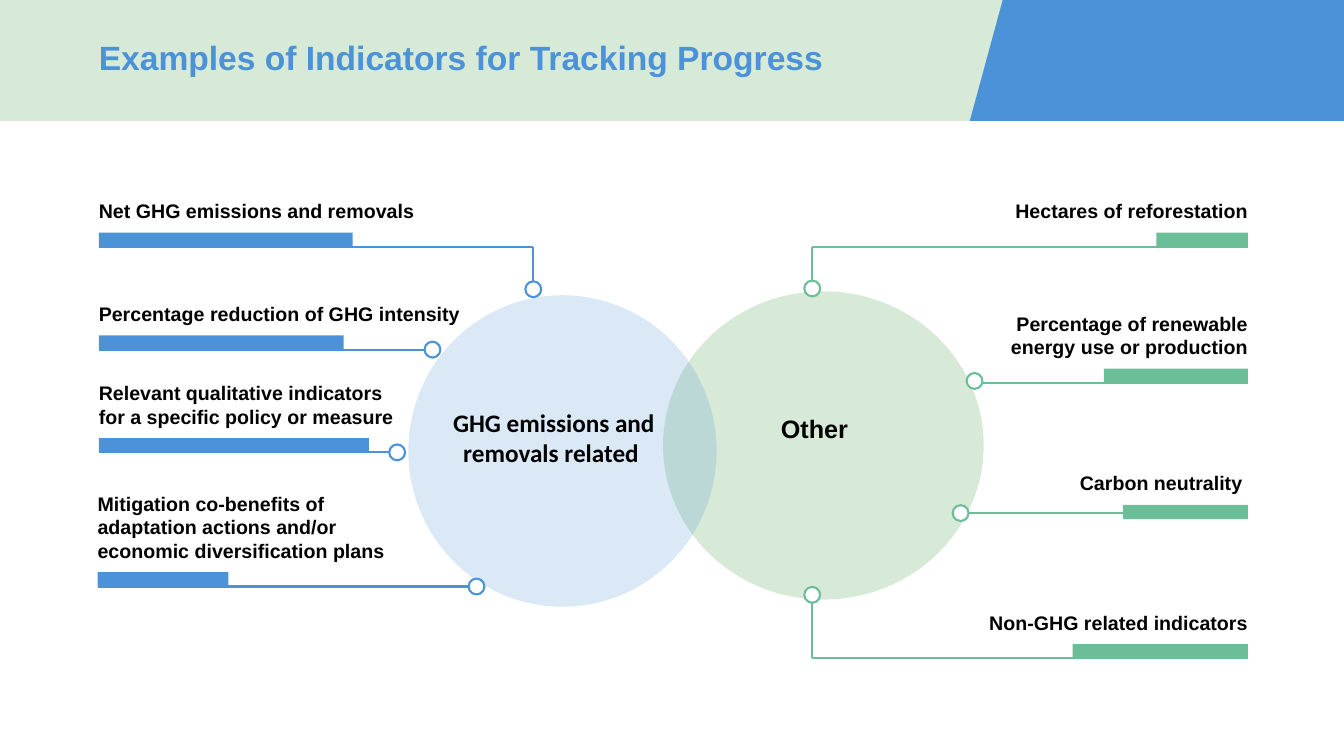
"""Build the slide on indicators for tracking progress."""
import pptx
import pptx.dml.color
import pptx.enum.shapes
import pptx.enum.text
import pptx.oxml.ns
import pptx.oxml.xmlchemy
import pptx.util

Cm = pptx.util.Cm
RGBColor = pptx.dml.color.RGBColor
Shape = pptx.enum.shapes.MSO_SHAPE
Align = pptx.enum.text.PP_ALIGN
Anchor = pptx.enum.text.MSO_ANCHOR

BLUE = RGBColor(0x4B, 0x92, 0xD8)
GREEN = RGBColor(0x6C, 0xBE, 0x99)
PALE_GREEN = RGBColor(0xD7, 0xEA, 0xD7)
BLACK = RGBColor(0, 0, 0)
WHITE = RGBColor(0xFF, 0xFF, 0xFF)

SLIDE_WIDTH, SLIDE_HEIGHT = 33.87, 19.05
HEADER_HEIGHT = 3.05
LINE_WIDTH = pptx.util.Pt(1.5)
RING_SIZE = 0.4
BAR_HEIGHT = 0.36
LABEL_GAP = 0.48
ROW_HEIGHT = 0.6
LEFT_EDGE, RIGHT_EDGE = 2.49, 31.45

LEFT_INDICATORS = [
    dict(text="Relevant qualitative indicators for a specific policy or measure",
         rows=2, base=11.4, width=7.8, bar=6.81, ring=(10.01, 11.4)),
    dict(text="Mitigation co-benefits of adaptation actions and/or economic diversification plans",
         rows=3, base=14.78, width=8.08, bar=3.3, ring=(12.01, 14.78), edge=2.46),
    dict(text="Percentage reduction of GHG intensity",
         base=8.81, width=9.98, bar=6.17, ring=(10.9, 8.81)),
    dict(text="Net GHG emissions and removals",
         base=6.22, width=9.55, bar=6.4, ring=(13.44, 7.29)),
]
RIGHT_INDICATORS = [
    dict(text="Hectares of reforestation",
         base=6.22, width=9.55, bar=2.31, ring=(20.47, 7.27)),
    dict(text="Non-GHG related indicators",
         base=16.59, width=9.55, bar=4.42, ring=(20.47, 14.99)),
    dict(text="Carbon neutrality ",
         base=13.08, width=9.55, bar=3.15, ring=(24.21, 12.93), line_y=12.92),
    dict(text="Percentage of renewable energy use or production",
         rows=2, base=9.65, width=7.11, bar=3.63, ring=(24.56, 9.6)),
]


def add_text(page, text, left, top, width, height, *, size=14, font="Arial",
             color=BLACK, align=Align.LEFT, anchor=Anchor.MIDDLE,
             right_inset=0, bottom_inset=0.13, line_spacing=1.0):
    """Add a bold, wrapped text box."""
    box = page.shapes.add_textbox(Cm(left), Cm(top), Cm(width), Cm(height))
    frame = box.text_frame
    frame.word_wrap = True
    frame.vertical_anchor = anchor
    frame.margin_left = frame.margin_top = 0
    frame.margin_right, frame.margin_bottom = Cm(right_inset), Cm(bottom_inset)
    para = frame.paragraphs[0]
    para.alignment = align
    para.line_spacing = line_spacing
    span = para.add_run()
    span.text = text
    span.font.name = font
    span.font.size = pptx.util.Pt(size)
    span.font.bold = True
    span.font.color.rgb = color


def paint(shape, fill, outline=None):
    """Give a shape a flat fill and an optional outline."""
    shape.shadow.inherit = False
    shape.fill.solid()
    shape.fill.fore_color.rgb = fill
    if outline is None:
        shape.line.fill.background()
    else:
        shape.line.color.rgb = outline
        shape.line.width = LINE_WIDTH


def add_shape(page, kind, left, top, width, height, fill, outline=None):
    """Add a painted preset shape."""
    shape = page.shapes.add_shape(kind, Cm(left), Cm(top), Cm(width), Cm(height))
    paint(shape, fill, outline)
    return shape


def set_opacity(shape, percent):
    """Make the solid fill of a shape see-through."""
    color = shape._element.spPr.find(".//" + pptx.oxml.ns.qn("a:srgbClr"))
    alpha = pptx.oxml.xmlchemy.OxmlElement("a:alpha")
    alpha.set("val", str(percent * 1000))
    color.append(alpha)


def add_line(page, start, end, color):
    """Add a straight line between two points."""
    line = page.shapes.add_connector(
        pptx.enum.shapes.MSO_CONNECTOR.STRAIGHT, *map(Cm, start + end))
    line.line.color.rgb = color
    line.line.width = LINE_WIDTH
    line._element.spPr.append(pptx.oxml.xmlchemy.OxmlElement("a:effectLst"))


def add_header(page):
    """Add the title band with its slanted corner."""
    add_shape(page, Shape.RECTANGLE, 0, 0, SLIDE_WIDTH, HEADER_HEIGHT, PALE_GREEN)
    builder = page.shapes.build_freeform(Cm(24.44), Cm(HEADER_HEIGHT))
    corners = [(25.27, 0), (SLIDE_WIDTH, 0), (SLIDE_WIDTH, HEADER_HEIGHT)]
    builder.add_line_segments([(Cm(x), Cm(y)) for x, y in corners])
    paint(builder.convert_to_shape(), BLUE)
    add_text(page, "Examples of Indicators for Tracking Progress",
             2.49, 0.74, 19.94, 1.55, size=24, color=BLUE,
             bottom_inset=0, line_spacing=0.9)


def add_circles(page):
    """Add the two overlapping circles with their names."""
    add_shape(page, Shape.OVAL, 16.71, 7.34, 8.08, 7.77, PALE_GREEN)
    add_text(page, "Other ", 18.01, 10.41, 5.46, 0.89, size=18,
             align=Align.CENTER, right_inset=0.25)
    blue_circle = add_shape(page, Shape.OVAL, 10.29, 7.44, 7.77, 7.85, BLUE)
    set_opacity(blue_circle, 20)
    add_text(page, "GHG emissions and removals related ", 11.05, 10.24, 6.07, 1.68,
             size=18, font="Calibri", align=Align.CENTER, right_inset=0.25)


def add_indicator(page, *, text, base, width, bar, ring, edge, color,
                  from_right=False, rows=1, line_y=None):
    """Add a label, its bar and the line that leads to a ring."""
    ring_x, ring_y = ring
    line_y = line_y or base
    height = rows * ROW_HEIGHT + 0.13
    add_text(page, text, edge - width * from_right, base - LABEL_GAP - height,
             width, height, anchor=Anchor.BOTTOM,
             align=Align.RIGHT if from_right else Align.LEFT)
    add_shape(page, Shape.RECTANGLE, edge - bar * from_right, base - BAR_HEIGHT,
              bar, BAR_HEIGHT, color)
    add_line(page, (ring_x, line_y), (edge, line_y), color)
    if abs(ring_y - line_y) > RING_SIZE:
        add_line(page, (ring_x, line_y), (ring_x, ring_y), color)
    add_shape(page, Shape.OVAL, ring_x - RING_SIZE / 2, ring_y - RING_SIZE / 2,
              RING_SIZE, RING_SIZE, WHITE, color)


def main():
    """Build and save the deck."""
    deck = pptx.Presentation()
    deck.slide_width, deck.slide_height = Cm(SLIDE_WIDTH), Cm(SLIDE_HEIGHT)
    page = deck.slides.add_slide(deck.slide_layouts[6])
    add_header(page)
    add_circles(page)
    for indicator in LEFT_INDICATORS:
        add_indicator(page, **{"edge": LEFT_EDGE, "color": BLUE, **indicator})
    for indicator in RIGHT_INDICATORS:
        add_indicator(page, edge=RIGHT_EDGE, color=GREEN, from_right=True, **indicator)
    deck.save("out.pptx")


if __name__ == "__main__":
    main()
